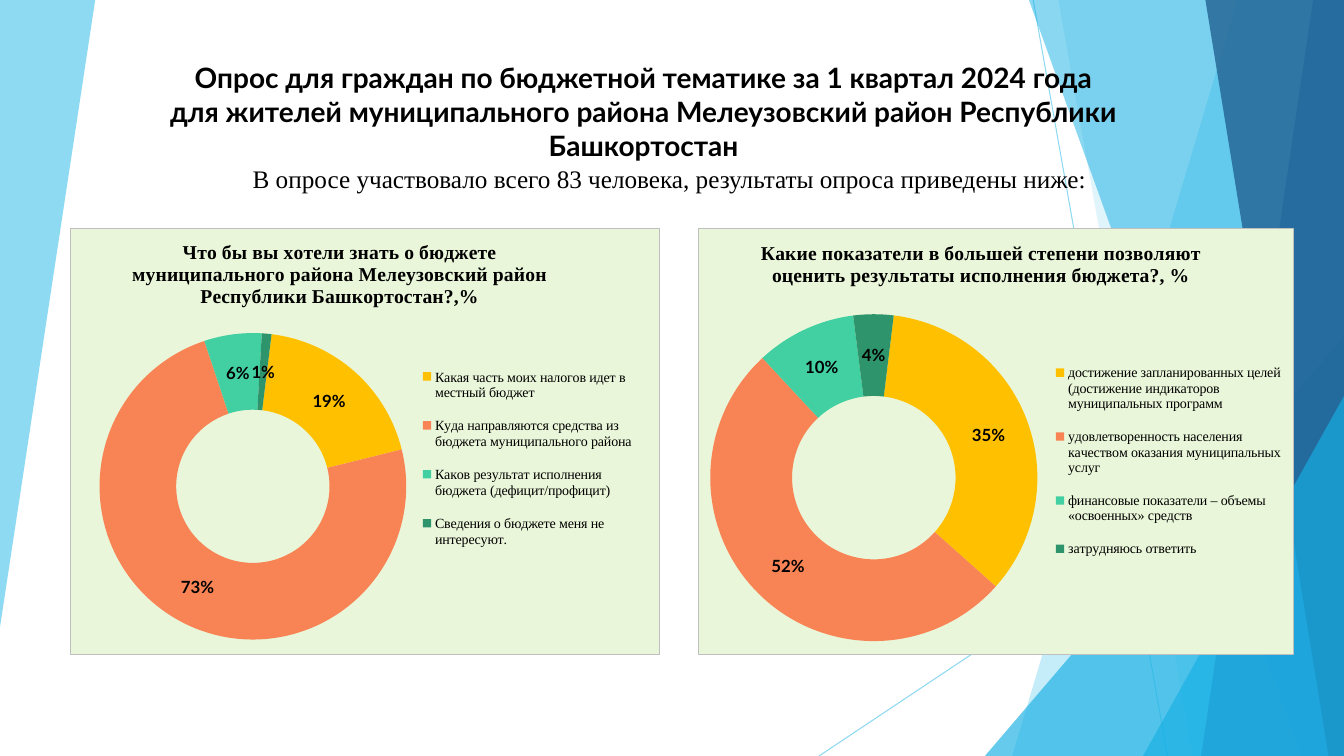
from lxml import etree
from pptx import Presentation
from pptx.chart.data import CategoryChartData
from pptx.dml.color import RGBColor
from pptx.enum.chart import XL_CHART_TYPE, XL_LEGEND_POSITION
from pptx.enum.shapes import MSO_CONNECTOR, MSO_SHAPE
from pptx.enum.text import MSO_ANCHOR, PP_ALIGN
from pptx.oxml import parse_xml
from pptx.oxml.ns import nsdecls, qn
from pptx.util import Pt

DOUGHNUT = XL_CHART_TYPE.DOUGHNUT
LEGEND_RIGHT = XL_LEGEND_POSITION.RIGHT
STRAIGHT = MSO_CONNECTOR.STRAIGHT
TRIANGLE = MSO_SHAPE.ISOSCELES_TRIANGLE
CENTER = PP_ALIGN.CENTER
TOP, BOTTOM = MSO_ANCHOR.TOP, MSO_ANCHOR.BOTTOM

THEME = {
    "sky": "5FCBEF", "azure": "17B0E4", "blue": "2E83C3", "navy": "226292",
    "text": RGBColor(0, 0, 0), "panel": "EAF6D9", "border": "BFBFBF",
    "slices": ["FFC000", "F88456", "42D0A2", "2E946B"],
    "sans": "Lato", "serif": "Times New Roman",
    "title": Pt(20), "subtitle": Pt(18), "chart_title": Pt(14),
    "label": Pt(12), "legend": Pt(10),
}
WIDTH, HEIGHT = 960, 540


def set_alpha(shape, percent):
    for colour in shape._element.spPr.iter(qn("a:srgbClr")):
        etree.SubElement(colour, qn("a:alpha")).set("val", str(percent * 1000))


def set_layout(element, index, **fractions):
    """Place a chart part by fractions of the chart area."""
    for old_layout in element.findall(qn("c:layout")):
        element.remove(old_layout)
    layout = etree.Element(qn("c:layout"))
    manual = etree.SubElement(layout, qn("c:manualLayout"))
    if element.tag == qn("c:plotArea"):
        etree.SubElement(manual, qn("c:layoutTarget")).set("val", "inner")
    for axis in "xy":
        etree.SubElement(manual, qn(f"c:{axis}Mode")).set("val", "edge")
    for name, value in fractions.items():
        etree.SubElement(manual, qn(f"c:{name}")).set("val", str(value))
    element.insert(index, layout)


presentation = Presentation()
presentation.slide_width, presentation.slide_height = Pt(WIDTH), Pt(HEIGHT)
slide = presentation.slides.add_slide(presentation.slide_layouts[6])
shapes = slide.shapes

# Thin background lines
thin_lines = []
for x1, y1, x2, y2 in [(738, 0, 834, HEIGHT), (WIDTH, 290, 585, HEIGHT)]:
    line = shapes.add_connector(STRAIGHT, Pt(x1), Pt(y1), Pt(x2), Pt(y2))
    line.line.color.rgb = RGBColor.from_string(THEME["sky"])
    line.line.width = Pt(0.75)
    set_alpha(line, 70)
    etree.SubElement(line._element.spPr, qn("a:effectLst"))

# Translucent facets: outline points, colour, opacity
right_edge = [(WIDTH, 0), (WIDTH, HEIGHT)]
facets = [
    ([(0, 0), (68, 0), (0, 448)], "sky", 70),
    ([(884, 0), *right_edge, (723, HEIGHT)], "sky", 36),
    ([(756, 0), *right_edge, (852, HEIGHT)], "sky", 20),
    ([(703.5, 240)], "azure", 66),
    ([(735, 0), *right_edge, (929.5, HEIGHT)], "azure", 50),
    ([(938, 0), *right_edge, (858, HEIGHT)], "blue", 70),
    ([(861, 0), *right_edge, (949, HEIGHT)], "navy", 80),
    ([(816.5, 283)], "azure", 66),
]
for points, colour, opacity in facets:
    x, y = points[0]
    if len(points) == 1:  # corner triangle reaching the lower right
        facet = shapes.add_shape(TRIANGLE, Pt(x), Pt(y), Pt(WIDTH - x), Pt(HEIGHT - y))
        facet.adjustments[0] = 1
    else:
        builder = shapes.build_freeform(Pt(x), Pt(y))
        builder.add_line_segments([(Pt(px), Pt(py)) for px, py in points[1:]])
        facet = builder.convert_to_shape()
    facet.shadow.inherit = False
    facet.line.fill.background()
    facet.fill.solid()
    facet.fill.fore_color.rgb = RGBColor.from_string(THEME[colour])
    set_alpha(facet, opacity)

# Heading and subtitle
headings = [
    ("Опрос для граждан по бюджетной тематике за 1 квартал 2024 года\v"
     "для жителей муниципального района Мелеузовский район Республики Башкортостан",
     (113, 42.5, 693.5, 76.5), BOTTOM, "sans", "title", True),
    ("В опросе участвовало всего 83 человека, результаты опроса приведены ниже:",
     (138, 113, 680.5, 29), TOP, "serif", "subtitle", False),
]
for text, box, anchor, face, size, bold in headings:
    text_box = shapes.add_textbox(*map(Pt, box))
    frame = text_box.text_frame
    frame.word_wrap = True
    frame.vertical_anchor = anchor
    frame.text = text
    paragraph = frame.paragraphs[0]
    paragraph.alignment = CENTER
    paragraph.font.name, paragraph.font.size = THEME[face], THEME[size]
    paragraph.font.bold = bold
    paragraph.font.color.rgb = THEME["text"]

# Survey charts
surveys = [
    {
        "box": (49.7, 162.7, 422, 305.5),
        "title": "Что бы вы хотели знать о бюджете\n"
                 "муниципального района Мелеузовский район\n"
                 "Республики Башкортостан?,%",
        "answers": [
            ("Какая часть моих налогов идет в местный бюджет", 19),
            ("Куда направляются средства из бюджета муниципального района", 73),
            ("Каков результат исполнения бюджета (дефицит/профицит)", 6),
            ("Сведения о бюджете меня не интересуют.", 1),
        ],
        "title_at": {"x": 0.1, "y": 0.02},
        "plot_at": {"x": 0.05, "y": 0.24, "w": 0.52, "h": 0.73},
        "legend_at": {"x": 0.58, "y": 0.29, "w": 0.39, "h": 0.5},
    },
    {
        "box": (498.5, 163.2, 425.5, 304.5),
        "title": "Какие показатели в большей степени позволяют\n"
                 "оценить результаты исполнения бюджета?, %",
        "answers": [
            ("достижение запланированных целей (достижение индикаторов "
             "муниципальных программ", 35),
            ("удовлетворенность населения качеством оказания муниципальных услуг", 52),
            ("финансовые показатели – объемы «освоенных» средств", 10),
            ("затрудняюсь ответить", 4),
        ],
        "title_at": {"x": 0.1, "y": 0.02},
        "plot_at": {"x": 0.02, "y": 0.2, "w": 0.55, "h": 0.77},
        "legend_at": {"x": 0.59, "y": 0.28, "w": 0.4, "h": 0.53},
    },
]
for survey in surveys:
    data = CategoryChartData(number_format='0"%"')
    data.categories = [answer for answer, share in survey["answers"]]
    data.add_series("Series 1", [share for answer, share in survey["answers"]])
    chart = shapes.add_chart(DOUGHNUT, *map(Pt, survey["box"]), data).chart
    chart.font.name, chart.font.size = THEME["sans"], THEME["legend"]
    chart.font.color.rgb = THEME["text"]

    # Panel fill and border
    chart._chartSpace.find(qn("c:chart")).addnext(parse_xml(
        f'<c:spPr {nsdecls("c", "a")}>'
        f'<a:solidFill><a:srgbClr val="{THEME["panel"]}"/></a:solidFill>'
        f'<a:ln w="{Pt(0.75)}"><a:solidFill><a:srgbClr val="{THEME["border"]}"/>'
        '</a:solidFill></a:ln></c:spPr>'))

    # Chart title
    chart.has_title = True
    title = chart.chart_title
    title.text_frame.text = survey["title"]
    for paragraph in title.text_frame.paragraphs:
        paragraph.alignment = CENTER
        paragraph.font.name, paragraph.font.size = THEME["serif"], THEME["chart_title"]
        paragraph.font.bold = True
        paragraph.font.color.rgb = THEME["text"]
    set_layout(title._element, 1, **survey["title_at"])

    # Legend
    chart.has_legend = True
    legend = chart.legend
    legend.position = LEGEND_RIGHT
    legend.include_in_layout = False
    legend.font.name, legend.font.size = THEME["serif"], THEME["legend"]
    legend.font.color.rgb = THEME["text"]
    set_layout(legend._element, 1, **survey["legend_at"])

    # Ring slices and labels
    plot = chart.plots[0]
    plot.vary_by_categories = True
    plot._element.find(qn("c:firstSliceAng")).set("val", "7")
    set_layout(plot._element.getparent(), 0, **survey["plot_at"])
    for index, colour in enumerate(THEME["slices"]):
        slice_format = plot.series[0].points[index].format
        slice_format.fill.solid()
        slice_format.fill.fore_color.rgb = RGBColor.from_string(colour)
        slice_format.line.fill.background()
    plot.has_data_labels = True
    labels = plot.data_labels
    labels.show_value, labels.show_percentage = True, False
    labels.number_format, labels.number_format_is_linked = '0"%"', False
    labels.font.name, labels.font.size = THEME["sans"], THEME["label"]
    labels.font.bold = True
    labels.font.color.rgb = THEME["text"]

presentation.save("out.pptx")
